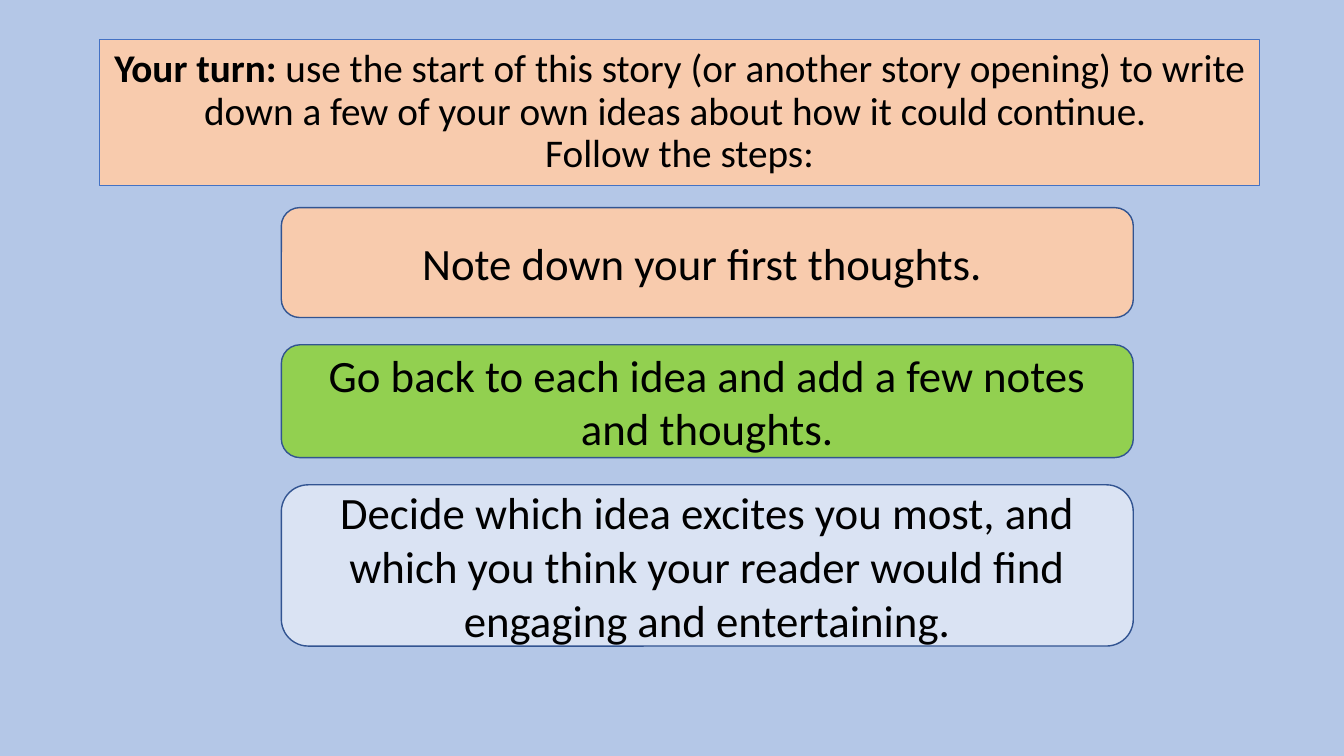
from pptx import Presentation
from pptx.dml.color import RGBColor
from pptx.enum.shapes import MSO_SHAPE
from pptx.enum.text import MSO_ANCHOR, PP_ALIGN
from pptx.util import Inches, Pt

RECTANGLE, ROUNDED = MSO_SHAPE.RECTANGLE, MSO_SHAPE.ROUNDED_RECTANGLE
MIDDLE, CENTER = MSO_ANCHOR.MIDDLE, PP_ALIGN.CENTER

HEADING = [
    ("Your turn:", True),
    (" use the start of this story (or another story opening) to write "
     "down a few of your own ideas about how it could continue. \v"
     "Follow the steps:", False),
]
STEPS = [
    ("Note down your first thoughts. ", "peach", 1.09),
    ("Go back to each idea and add a few notes and thoughts.", "green", 1.12),
    ("Decide which idea excites you most, and which you think your reader "
     "would find engaging and entertaining.", "pale", 1.6),
]

THEME = {
    "font": "Calibri", "heading_size": 28, "step_size": 32,
    "background": "B4C7E7", "text": "000000",
    "peach": "F8CBAD", "green": "92D050", "pale": "DAE3F3",
    "heading_line": "4472C4", "step_line": "325491",
}

SLIDE_WIDTH, SLIDE_HEIGHT = 13.33, 7.5
HEADING_BOX = (0.99, 0.39, 11.5, 1.45)
STEP_LEFT, STEP_TOP, STEP_WIDTH, STEP_GAP = 2.79, 2.06, 8.45, 0.27


def color(name):
    return RGBColor.from_string(THEME[name])


def apply_format(target, values):
    for name, value in values.items():
        setattr(target, name, value)


def add_box(slide, kind, box, fill, line, line_width, runs, size, spacing):
    shape = slide.shapes.add_shape(kind, *map(Inches, box))
    shape.shadow.inherit = False
    shape.fill.solid()
    shape.fill.fore_color.rgb = color(fill)
    shape.line.color.rgb = color(line)
    shape.line.width = Pt(line_width)
    apply_format(shape.text_frame, {"word_wrap": True, "vertical_anchor": MIDDLE})
    paragraph = shape.text_frame.paragraphs[0]
    apply_format(paragraph, {"alignment": CENTER, "line_spacing": spacing})
    for text, bold in runs:
        for index, part in enumerate(text.split("\v")):
            if index:
                paragraph.add_line_break()
            run = paragraph.add_run()
            run.text = part
            apply_format(run.font, {"name": THEME["font"], "size": Pt(THEME[size]), "bold": bold})
            run.font.color.rgb = color("text")


def main():
    presentation = Presentation()
    presentation.slide_width = Inches(SLIDE_WIDTH)
    presentation.slide_height = Inches(SLIDE_HEIGHT)
    slide = presentation.slides.add_slide(presentation.slide_layouts[6])
    slide.background.fill.solid()
    slide.background.fill.fore_color.rgb = color("background")

    add_box(slide, RECTANGLE, HEADING_BOX, "peach", "heading_line", 0.75,
            HEADING, "heading_size", 0.9)
    top = STEP_TOP
    for text, fill, height in STEPS:
        add_box(slide, ROUNDED, (STEP_LEFT, top, STEP_WIDTH, height), fill,
                "step_line", 1, [(text, False)], "step_size", 1.0)
        top += height + STEP_GAP

    presentation.save("out.pptx")


if __name__ == "__main__":
    main()
